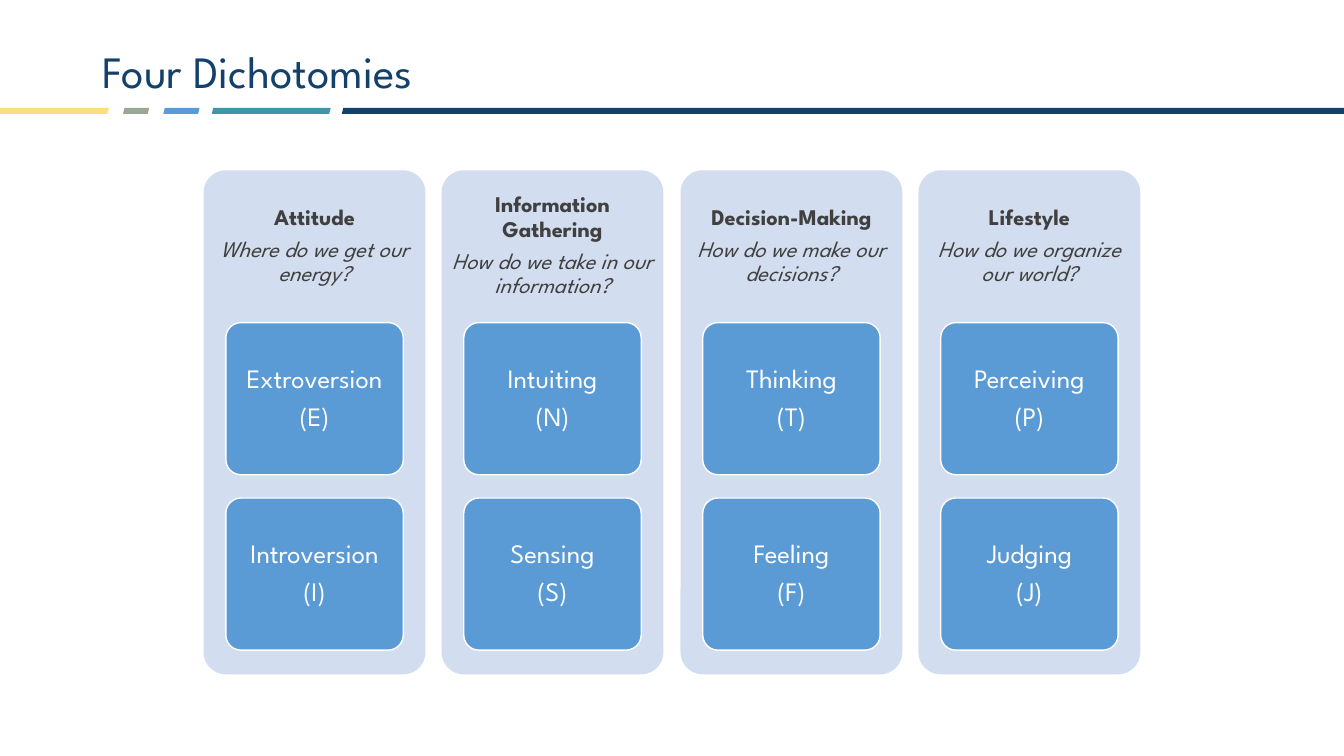
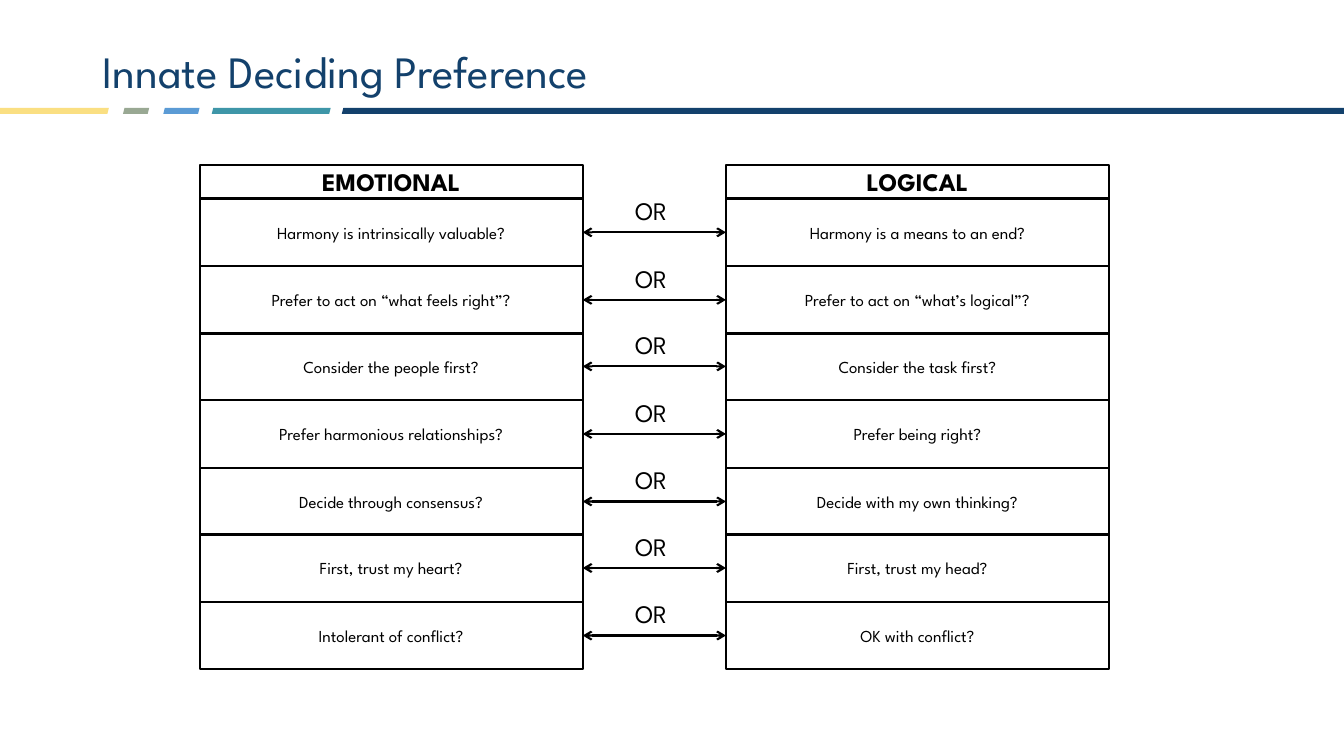
from dataclasses import dataclass
from typing import NamedTuple

from pptx import Presentation, util as u
from pptx.dml.color import RGBColor
from pptx.enum import shapes, text
from pptx.oxml.ns import qn
from lxml import etree

PX = 9144  # EMU: 100 px to the inch
FONT = "League Spartan"

NAVY = RGBColor(0x13, 0x41, 0x6C)
YELLOW = RGBColor(0xFA, 0xDF, 0x82)
SAGE = RGBColor(0x99, 0xA8, 0x93)
BLUE = RGBColor(0x5B, 0x9B, 0xD5)
TEAL = RGBColor(0x3E, 0x96, 0xA8)
PALE_BLUE = RGBColor(0xD2, 0xDE, 0xEF)
GRAY = RGBColor(0x40, 0x40, 0x40)
WHITE = RGBColor(0xFF, 0xFF, 0xFF)
BLACK = RGBColor(0x00, 0x00, 0x00)

SHAPE = shapes.MSO_SHAPE
CENTER = text.PP_ALIGN.CENTER
MIDDLE = text.MSO_ANCHOR.MIDDLE


class Box(NamedTuple):
    left: int
    top: int
    width: int
    height: int

    def emu(self) -> list:
        return [u.Emu(n * PX) for n in self]


class Band(NamedTuple):
    left: int
    width: int
    color: RGBColor


@dataclass(frozen=True)
class Style:
    size: int
    color: RGBColor
    bold: bool = False
    italic: bool = False


@dataclass(frozen=True)
class Dichotomy:
    name: str
    question: str
    poles: tuple


BANDS = (
    Band(-4, 112, YELLOW),
    Band(122, 26, SAGE),
    Band(162, 36, BLUE),
    Band(210, 118, TEAL),
    Band(339, 998, NAVY),
)
TITLE = Style(32, NAVY)
NAME = Style(16, GRAY, bold=True)
QUESTION = Style(16, GRAY, italic=True)
POLE = Style(19, WHITE)
HEADING = Style(18, BLACK, bold=True)
STATEMENT = Style(12, BLACK)
OR_LABEL = Style(18, BLACK)

DICHOTOMIES = (
    Dichotomy("Attitude", "Where do we get our energy?",
              (("Extroversion", "(E)"), ("Introversion", "(I)"))),
    Dichotomy("Information Gathering", "How do we take in our information?",
              (("Intuiting", "(N)"), ("Sensing", "(S)"))),
    Dichotomy("Decision-Making", "How do we make our decisions?",
              (("Thinking", "(T)"), ("Feeling", "(F)"))),
    Dichotomy("Lifestyle", "How do we organize our world?",
              (("Perceiving", "(P)"), ("Judging", "(J)"))),
)
PREFERENCES = (
    ("Harmony is intrinsically valuable?", "Harmony is a means to an end?"),
    ("Prefer to act on “what feels right”?", "Prefer to act on “what’s logical”?"),
    ("Consider the people first?", "Consider the task first?"),
    ("Prefer harmonious relationships?", "Prefer being right?"),
    ("Decide through consensus?", "Decide with my own thinking?"),
    ("First, trust my heart?", "First, trust my head?"),
    ("Intolerant of conflict?", "OK with conflict?"),
)


def write(sp, lines: list, frame: dict, para: dict) -> None:
    """Fill a shape with (words, style) lines, one paragraph each."""
    tf = sp.text_frame
    for key, value in frame.items():
        setattr(tf, key, value)
    for i, (words, style) in enumerate(lines):
        p = tf.paragraphs[0] if i == 0 else tf.add_paragraph()
        for key, value in para.items():
            setattr(p, key, value)
        r = p.add_run()
        r.text = words
        font = {"name": FONT, "size": u.Pt(style.size),
                "bold": style.bold, "italic": style.italic}
        for key, value in font.items():
            setattr(r.font, key, value)
        r.font.color.rgb = style.color


def margins(x: int, y: int) -> dict:
    return {"margin_left": u.Emu(x * PX), "margin_right": u.Emu(x * PX),
            "margin_top": u.Emu(y * PX), "margin_bottom": u.Emu(y * PX)}


def add_shape(s, kind, box: Box, fill=None, line=None, width: float = 1):
    sp = s.shapes.add_shape(kind, *box.emu())
    sp.shadow.inherit = False
    if fill is None:
        sp.fill.background()
    else:
        sp.fill.solid()
        sp.fill.fore_color.rgb = fill
    if line is None:
        sp.line.fill.background()
    else:
        sp.line.color.rgb = line
        sp.line.width = u.Pt(width)
    if kind == SHAPE.ROUNDED_RECTANGLE:
        sp.adjustments[0] = 0.1
    return sp


def add_slide(prs, title: str):
    """Add a blank slide with the shared bands and title."""
    s = prs.slides.add_slide(prs.slide_layouts[6])
    for band in BANDS:
        add_shape(s, SHAPE.PARALLELOGRAM, Box(band.left, 107, band.width, 6), band.color)
    sp = s.shapes.add_textbox(*Box(92, 40, 1150, 67).emu())
    write(sp, [(title, TITLE)], {"word_wrap": True, "vertical_anchor": MIDDLE},
          {"line_spacing": 0.9})
    return s


def add_dichotomy(s, left: int, item: Dichotomy) -> None:
    frame = {"word_wrap": True, "vertical_anchor": MIDDLE}
    para = {"alignment": CENTER, "line_spacing": 0.9}
    add_shape(s, SHAPE.ROUNDED_RECTANGLE, Box(left, 169, 220, 500), PALE_BLUE)
    sp = s.shapes.add_textbox(*Box(left, 169, 220, 150).emu())
    write(sp, [(item.name, NAME), (item.question, QUESTION)],
          frame | margins(7, 7), para | {"space_after": u.Pt(5.6)})
    for i, pole in enumerate(item.poles):
        sp = add_shape(s, SHAPE.ROUNDED_RECTANGLE,
                       Box(left + 22, 320 + i * 174, 176, 151), BLUE, WHITE)
        write(sp, [(words, POLE) for words in pole],
              frame | margins(5, 4), para | {"space_after": u.Pt(6.65)})


def add_cell(s, box: Box, words: str, style: Style):
    sp = add_shape(s, SHAPE.RECTANGLE, box, line=BLACK, width=1.5)
    write(sp, [(words, style)], {"word_wrap": True, "vertical_anchor": MIDDLE},
          {"alignment": CENTER})
    return sp


def add_double_arrow(s, start, end) -> None:
    """Join the right side of start to the left side of end."""
    c = s.shapes.add_connector(shapes.MSO_CONNECTOR.STRAIGHT, 0, 0, 0, 0)
    c.begin_connect(start, 3)
    c.end_connect(end, 1)
    c.line.color.rgb = BLACK
    c.line.width = u.Pt(1.5)
    ln = c.line._get_or_add_ln()
    for tag in ("a:headEnd", "a:tailEnd"):
        etree.SubElement(ln, qn(tag), type="arrow")
    etree.SubElement(c._element.spPr, qn("a:effectLst"))


def build_dichotomies(prs) -> None:
    s = add_slide(prs, "Four Dichotomies")
    for i, item in enumerate(DICHOTOMIES):
        add_dichotomy(s, 202 + i * 473 // 2, item)


def build_preferences(prs) -> None:
    s = add_slide(prs, "Innate Deciding Preference")
    lefts, width = (198, 720), 380
    for left, heading in zip(lefts, ("EMOTIONAL", "LOGICAL")):
        add_cell(s, Box(left, 164, width, 33), heading, HEADING)
    for i, pair in enumerate(PREFERENCES):
        top = 197 + round(i * 200 / 3)
        cells = [add_cell(s, Box(left, top, width, 67), words, STATEMENT)
                 for left, words in zip(lefts, pair)]
        add_double_arrow(s, *cells)
        sp = s.shapes.add_textbox(*Box(620, top - 8, 57, 40).emu())
        write(sp, [("OR", OR_LABEL)],
              {"word_wrap": False, "auto_size": text.MSO_AUTO_SIZE.SHAPE_TO_FIT_TEXT}, {})


def main() -> None:
    prs = Presentation()
    prs.slide_width, prs.slide_height = u.Emu(1333 * PX), u.Emu(750 * PX)
    build_dichotomies(prs)
    build_preferences(prs)
    prs.save("out.pptx")


if __name__ == "__main__":
    main()
